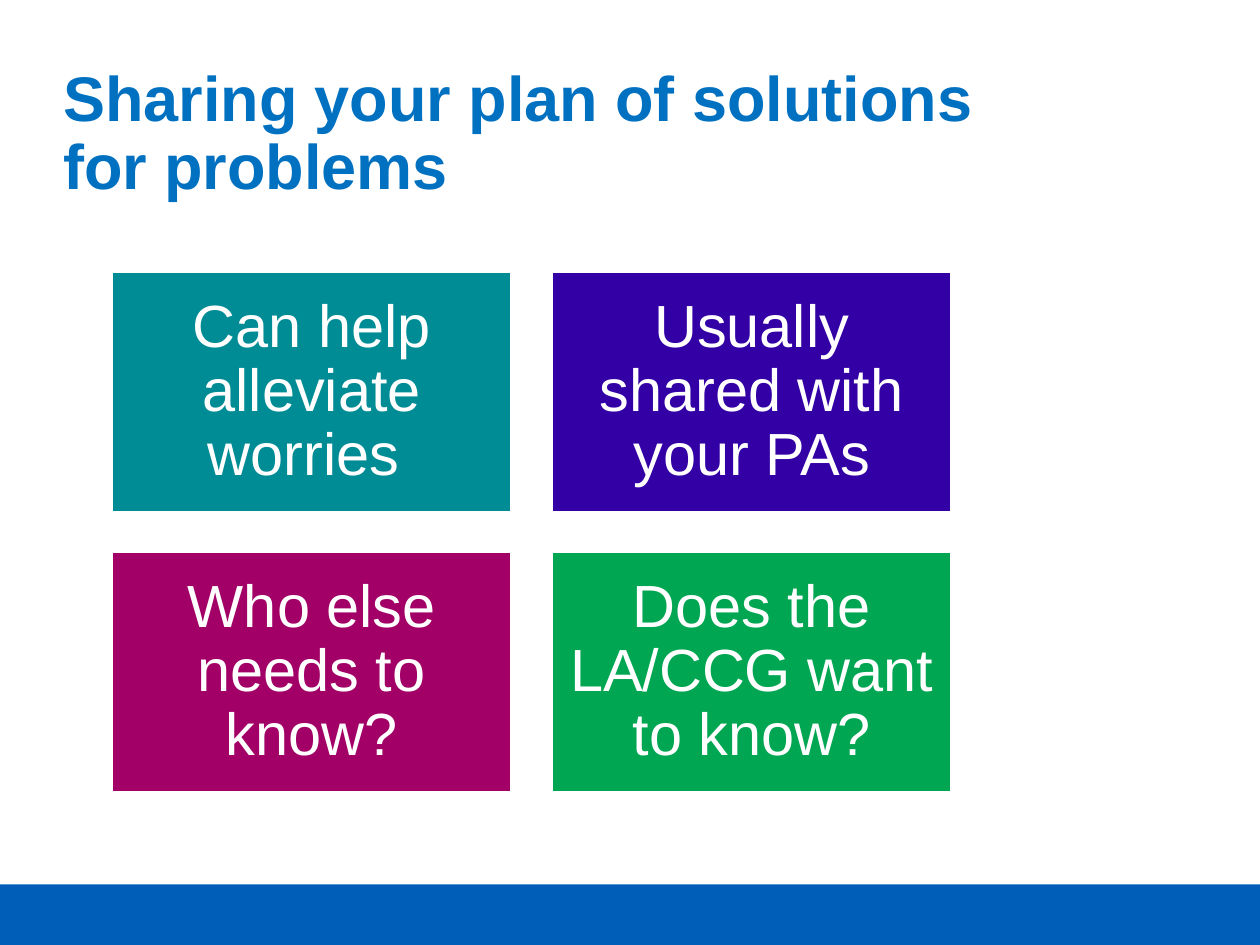
import pptx
import pptx.util
import pptx.dml.color
import pptx.enum.shapes
import pptx.enum.text
from pptx.util import Cm, Pt

COLORS = {
    "title": "0070C0",
    "footer": "005EB8",
    "white": "FFFFFF",
    "teal": "008C95",
    "violet": "3300A5",
    "magenta": "A20067",
    "green": "00A651",
}

CARDS = [
    ("Can help alleviate worries ", "teal"),
    ("Usually shared with your PAs", "violet"),
    ("Who else needs to know?", "magenta"),
    ("Does the LA/CCG want to know?", "green"),
]

COLUMNS = 2
CARD_LEFT, CARD_TOP = 2.26, 5.49
CARD_WIDTH, CARD_HEIGHT = 8.05, 4.83
CARD_GAP = 0.82


def rgb(name):
    return pptx.dml.color.RGBColor.from_string(COLORS[name])


def format_paragraph(p, size, color, align, bold=False):
    p.alignment = align
    p.line_spacing = 0.9
    p.space_before = Pt(0)
    p.font.name = "Arial"
    p.font.size = Pt(size)
    p.font.bold = bold
    p.font.color.rgb = rgb(color)


def add_rect(s, left, top, width, height, fill):
    sp = s.shapes.add_shape(
        pptx.enum.shapes.MSO_SHAPE.RECTANGLE,
        Cm(left), Cm(top), Cm(width), Cm(height))
    sp.shadow.inherit = False
    sp.fill.solid()
    sp.fill.fore_color.rgb = rgb(fill)
    sp.line.fill.background()
    return sp


def set_title(s, text):
    sp = s.shapes.title
    sp.left, sp.top, sp.width, sp.height = Cm(1.02), Cm(1.22), Cm(19.4), Cm(1.8)
    tf = sp.text_frame
    tf.word_wrap = True
    tf.auto_size = pptx.enum.text.MSO_AUTO_SIZE.NONE
    tf.vertical_anchor = pptx.enum.text.MSO_ANCHOR.TOP
    tf.text = text
    format_paragraph(tf.paragraphs[0], 36, "title",
                     pptx.enum.text.PP_ALIGN.LEFT, bold=True)


def add_card(s, index, text, fill):
    row, column = divmod(index, COLUMNS)
    sp = add_rect(s, CARD_LEFT + column * (CARD_WIDTH + CARD_GAP),
                  CARD_TOP + row * (CARD_HEIGHT + CARD_GAP),
                  CARD_WIDTH, CARD_HEIGHT, fill)
    sp.line.color.rgb = rgb("white")
    sp.line.width = Pt(1)
    tf = sp.text_frame
    tf.word_wrap = True
    tf.vertical_anchor = pptx.enum.text.MSO_ANCHOR.MIDDLE
    tf.margin_left = tf.margin_right = Cm(0.36)
    tf.margin_top = tf.margin_bottom = Cm(0.36)
    tf.text = text
    format_paragraph(tf.paragraphs[0], 34, "white",
                     pptx.enum.text.PP_ALIGN.CENTER)


def main():
    prs = pptx.Presentation()
    prs.slide_width, prs.slide_height = Cm(25.4), Cm(19.05)
    s = prs.slides.add_slide(prs.slide_layouts[5])
    add_rect(s, 0, 17.83, 25.4, 1.22, "footer")
    set_title(s, "Sharing your plan of solutions for problems")
    for index, (text, fill) in enumerate(CARDS):
        add_card(s, index, text, fill)
    prs.save("out.pptx")


if __name__ == "__main__":
    main()
